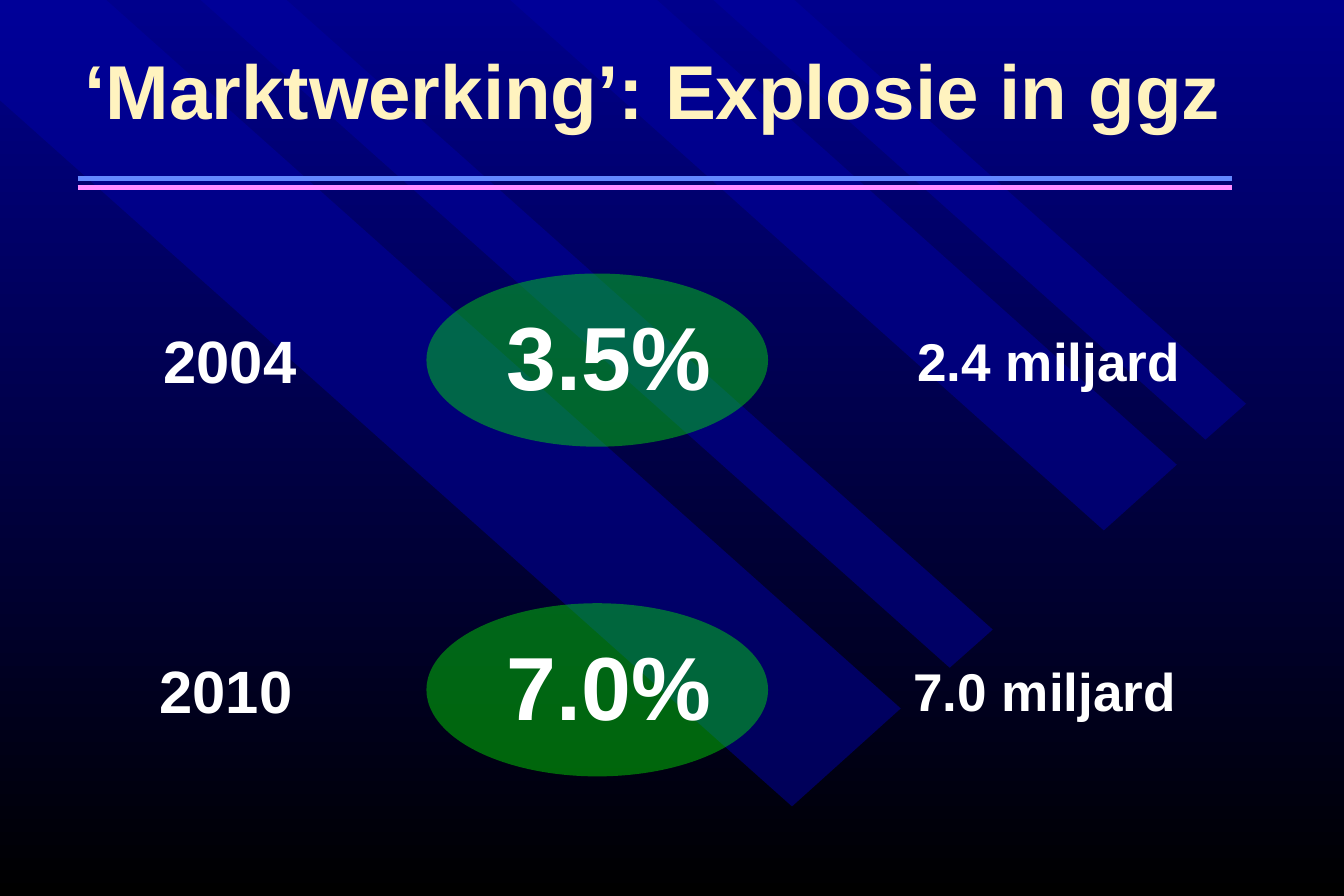
import pptx
import pptx.dml.color
import pptx.enum.shapes
import pptx.enum.text
import pptx.oxml
import pptx.oxml.ns
import pptx.util

WIDTH, HEIGHT = pptx.util.Inches(11.25), pptx.util.Inches(7.5)
COLORS = {
    "sky": "00008C", "night": "000000", "band": "0000A4", "blue_rule": "6388FF",
    "pink_rule": "FF8DFF", "title": "FFF3BF", "text": "FFFFFF", "oval": "00FF00",
}
BANDS = [
    [(67.02, 79.07), (7.91, 0), (0, 0), (0, 11.2), (58.93, 90)],
    [(21.33, 0), (73.87, 70.27), (70.67, 74.53), (14.93, 0)],
    [(48.89, 0), (87.56, 51.87), (82.13, 59.2), (37.96, 0)],
    [(53.07, 0), (89.69, 49.07), (92.71, 45.07), (59.11, 0)],
]
FIGURES = [("2004", "3.5%", "2.4 miljard", 0), ("2010", "7.0%", "7.0 miljard", -0.3)]
FIRST_ROW, ROW_STEP = 30.53, 36.8


def across(percent):
    """Return a share of the slide's width."""
    return round(WIDTH * percent / 100)


def down(percent):
    """Return a share of the slide's height."""
    return round(HEIGHT * percent / 100)


def place(left, top, width, height):
    """Return a box given in percent of the slide."""
    return across(left), down(top), across(width), down(height)


def color(name):
    """Return a named colour."""
    return pptx.dml.color.RGBColor.from_string(COLORS[name])


def paint(shape, name, opacity):
    """Fill a shape with a see-through colour and no outline."""
    shape.shadow.inherit = False
    shape.fill.solid()
    shape.fill.fore_color.rgb = color(name)
    shape.line.fill.background()
    shade = shape.fill._xPr.find(".//" + pptx.oxml.ns.qn("a:srgbClr"))
    alpha = pptx.oxml.parse_xml(f'<a:alpha {pptx.oxml.ns.nsdecls("a")} val="{opacity * 1000}"/>')
    shade.append(alpha)


def add_background(slide):
    """Fade the background from blue at the top to black."""
    fill = slide.background.fill
    fill.gradient()
    fill.gradient_angle = 270
    for stop, name in zip(fill.gradient_stops, ("sky", "night")):
        stop.color.rgb = color(name)


def add_band(slide, corners):
    """Draw one slanted band."""
    points = [(across(x), down(y)) for x, y in corners]
    builder = slide.shapes.build_freeform(*points[0])
    builder.add_line_segments(points[1:], close=True)
    paint(builder.convert_to_shape(), "band", 50)


def add_rule(slide, height, name):
    """Draw a horizontal rule below the title."""
    rule = slide.shapes.add_connector(
        pptx.enum.shapes.MSO_CONNECTOR.STRAIGHT,
        across(5.78), down(height), across(91.64), down(height))
    rule.line.color.rgb = color(name)
    rule.line.width = pptx.util.Pt(3)
    rule._element.spPr.append(pptx.oxml.parse_xml(f'<a:effectLst {pptx.oxml.ns.nsdecls("a")}/>'))


def add_text(slide, text, box, size, name="text"):
    """Add one centred bold line of text."""
    frame = slide.shapes.add_textbox(*place(*box)).text_frame
    frame.word_wrap = True
    frame.auto_size = pptx.enum.text.MSO_AUTO_SIZE.SHAPE_TO_FIT_TEXT
    paragraph = frame.paragraphs[0]
    paragraph.text = text
    paragraph.alignment = pptx.enum.text.PP_ALIGN.CENTER
    paragraph.font.name = "Arial"
    paragraph.font.size = pptx.util.Pt(size)
    paragraph.font.bold = True
    paragraph.font.color.rgb = color(name)


def add_figures(slide, top, year, share, amount, shift):
    """Add a year, its share in an oval and its amount."""
    oval = slide.shapes.add_shape(
        pptx.enum.shapes.MSO_SHAPE.OVAL, *place(31.73, top, 25.42, 19.33))
    paint(oval, "oval", 40)
    add_text(slide, share, (23.38, top + 2.4, 43.82, 13.47), size=54)
    add_text(slide, year, (4.89 + shift, top + 4.93, 24.44, 9.47), size=36)
    add_text(slide, amount, (62.4 + shift, top + 5.47, 31.29, 8.53), size=32)


def main():
    """Build and save the slide."""
    deck = pptx.Presentation()
    deck.slide_width, deck.slide_height = WIDTH, HEIGHT
    slide = deck.slides.add_slide(deck.slide_layouts[6])
    add_background(slide)
    for corners in BANDS:
        add_band(slide, corners)
    add_rule(slide, 19.87, "blue_rule")
    add_rule(slide, 20.93, "pink_rule")
    add_text(slide, "‘Marktwerking’: Explosie in ggz", (4, 4.13, 89.07, 11.73),
             size=46, name="title")
    for row, figures in enumerate(FIGURES):
        add_figures(slide, FIRST_ROW + row * ROW_STEP, *figures)
    deck.save("out.pptx")


if __name__ == "__main__":
    main()
